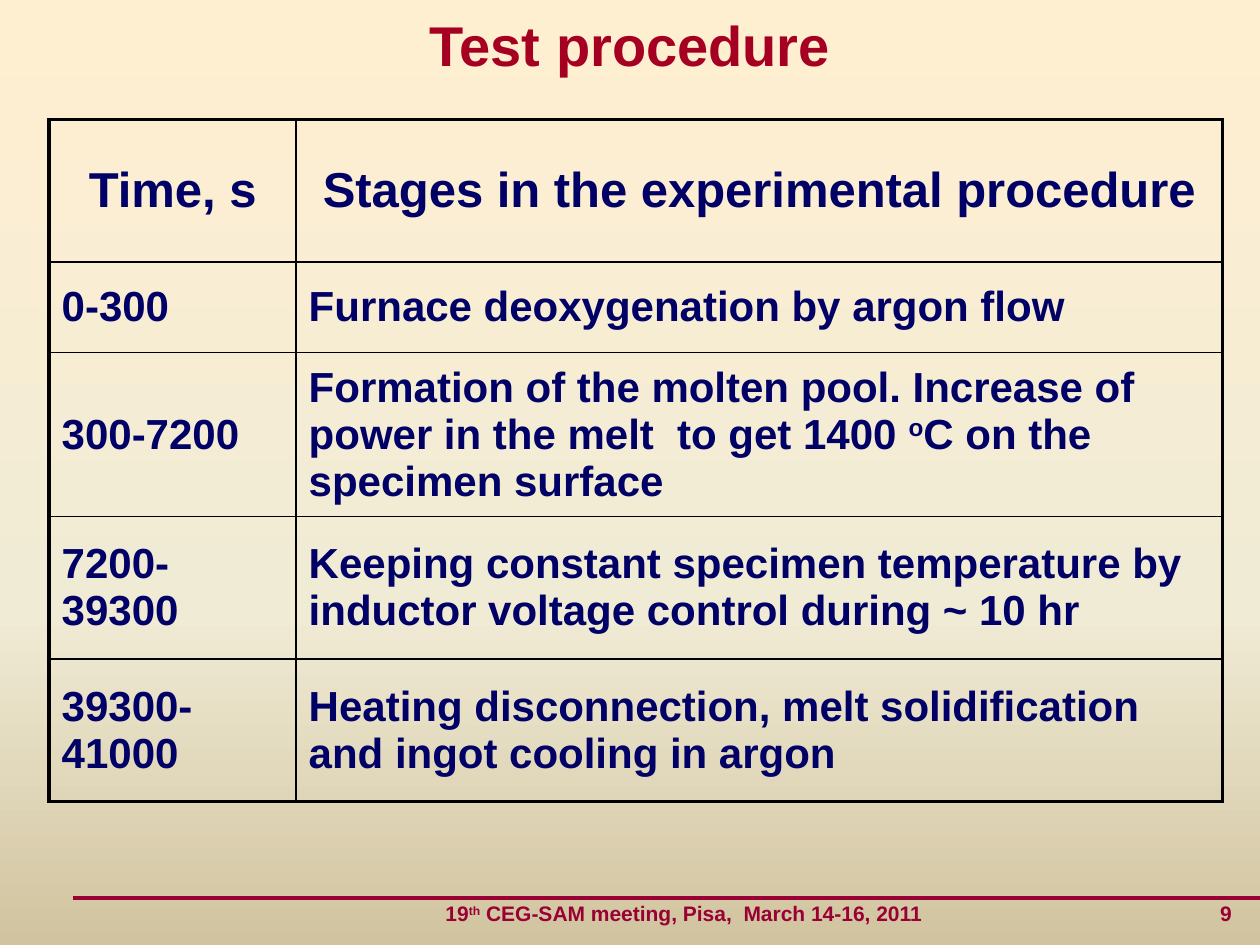
from copy import deepcopy
from lxml.etree import SubElement
from pptx import Presentation
from pptx.dml.color import RGBColor
from pptx.enum.shapes import MSO_CONNECTOR
from pptx.enum.text import MSO_ANCHOR, PP_ALIGN
from pptx.oxml.ns import qn
from pptx.util import Cm, Pt

COLORS = {
    "title": "A50021", "table": "000066", "border": "000000", "footer": "990033",
    "top": "FFEFD1", "middle": "F0EBD5", "bottom": "D1C39F",
}


def format_run(run, size, color, bold=True, raised=False):
    run.font.name = "Arial"
    run.font.size = Pt(size)
    run.font.bold = bold
    run.font.color.rgb = RGBColor.from_string(COLORS[color])
    if raised:
        run.font._element.set("baseline", "30000")


def add_border(cell, side, width):
    line = SubElement(cell._tc.get_or_add_tcPr(), qn(f"a:ln{side}"), w=str(Pt(width)))
    fill = SubElement(line, qn("a:solidFill"))
    SubElement(fill, qn("a:srgbClr"), val=COLORS["border"])


prs = Presentation()
prs.slide_width, prs.slide_height = Cm(25.4), Cm(19.05)
slide = prs.slides.add_slide(prs.slide_layouts[5])

backdrop = slide.background.fill
backdrop.gradient()
backdrop.gradient_angle = 270
first_stop = backdrop.gradient_stops[0]._gs
first_stop.addnext(deepcopy(first_stop))
for stop, name, position in zip(backdrop.gradient_stops, ("top", "middle", "bottom"), (0, 0.65, 1)):
    stop.color.rgb = RGBColor.from_string(COLORS[name])
    stop.position = position

rule = slide.shapes.add_connector(MSO_CONNECTOR.STRAIGHT, Cm(1.47), Cm(18.11), Cm(25.4), Cm(18.11))
rule.line.color.rgb = RGBColor.from_string(COLORS["footer"])
rule.line.width = Pt(2.25)
SubElement(rule._element.spPr, qn("a:effectLst"))

footer = slide.shapes.add_textbox(Cm(8.73), Cm(17.78), Cm(16.67), Cm(1.27)).text_frame
footer.word_wrap = True
footer.vertical_anchor = MSO_ANCHOR.MIDDLE
meeting = footer.paragraphs[0]
tabs = SubElement(meeting._p.get_or_add_pPr(), qn("a:tabLst"))
SubElement(tabs, qn("a:tab"), pos=str(Cm(15.85)), algn="r")
for part in ("19", "th", " CEG-SAM meeting, Pisa,  March 14-16, 2011\t9"):
    run = meeting.add_run()
    run.text = part
    format_run(run, 12, "footer", raised=part == "th")

title = slide.shapes.title
title.left, title.top, title.width, title.height = Cm(0), Cm(0), Cm(25.4), Cm(1.78)
title.text_frame.text = "Test procedure"
title.text_frame.vertical_anchor = MSO_ANCHOR.MIDDLE
title.text_frame.paragraphs[0].alignment = PP_ALIGN.CENTER
format_run(title.text_frame.paragraphs[0].runs[0], 32, "title")

stages = [
    ("Time, s", ["Stages in the experimental procedure"], 2.87),
    ("0-300", ["Furnace deoxygenation by argon flow"], 1.83),
    ("300-7200", ["Formation of the molten pool. Increase of power in the melt  to get 1400 ",
                  "o", "C on the specimen surface"], 3.07),
    ("7200-39300", ["Keeping constant specimen temperature by inductor voltage control during ~ 10 hr"], 2.87),
    ("39300-41000", ["Heating disconnection, melt solidification and ingot cooling in argon"], 2.87),
]
total_height = sum(height for _, _, height in stages)
procedure = slide.shapes.add_table(
    len(stages), 2, Cm(0.99), Cm(2.41), Cm(23.65), Cm(total_height)).table
procedure.first_row = procedure.horz_banding = False
procedure.columns[0].width, procedure.columns[1].width = Cm(4.98), Cm(18.67)

last = len(stages) - 1
for row, (time, stage, height) in enumerate(stages):
    procedure.rows[row].height = Cm(height)
    for col, parts in enumerate(([time], stage)):
        cell = procedure.cell(row, col)
        outer = {"L": col == 0, "R": col == 1, "T": row == 0, "B": row == last}
        for side, is_outer in outer.items():
            add_border(cell, side, 2.25 if is_outer else 1)
        cell.fill.background()
        cell.vertical_anchor = MSO_ANCHOR.MIDDLE
        entry = cell.text_frame.paragraphs[0]
        entry.alignment = PP_ALIGN.CENTER if row == 0 else PP_ALIGN.LEFT
        for part in parts:
            run = entry.add_run()
            run.text = part
            format_run(run, 28 if row == 0 else 24, "table", raised=part == "o")

prs.save("out.pptx")
